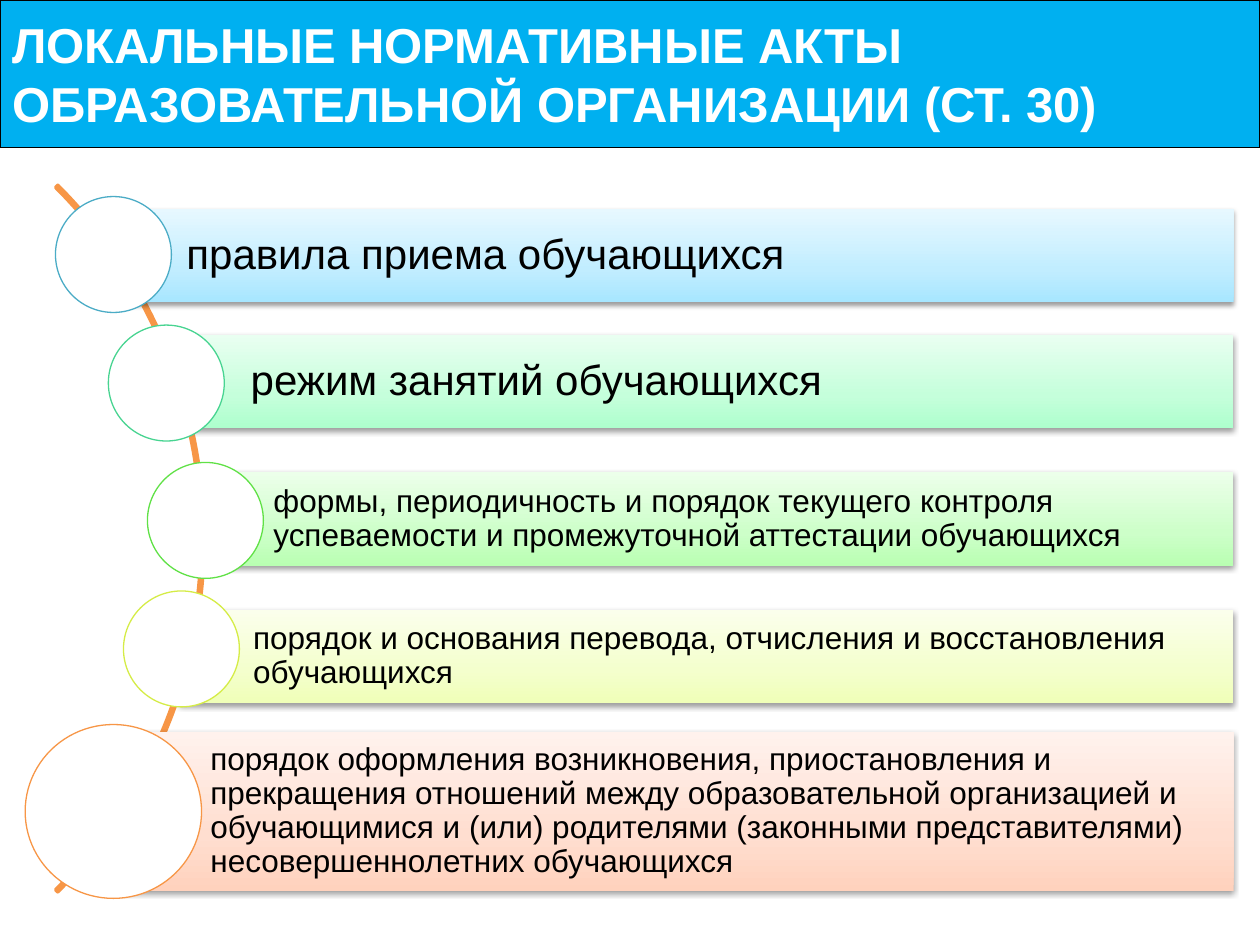
from dataclasses import dataclass

from copy import deepcopy
from lxml import etree
from pptx import Presentation
from pptx import util as u
from pptx.dml.color import RGBColor
from pptx.enum import shapes, text
from pptx.oxml.ns import qn

# Grid: 10 columns by 7.5 rows of equal square cells
WIDTH, HEIGHT = u.Inches(10), u.Inches(7.5)
COLUMN, ROW = WIDTH / 10, HEIGHT / 7.5
BAR_RIGHT = 9.79
FONT = "Arial"

BLACK = RGBColor(0x00, 0x00, 0x00)
WHITE = RGBColor(0xFF, 0xFF, 0xFF)
SKY = RGBColor(0x00, 0xB0, 0xF0)
ORANGE = RGBColor(0xF7, 0x96, 0x46)
TEAL = RGBColor(0x4B, 0xAC, 0xC6)
MINT = RGBColor(0x48, 0xD4, 0x91)
GREEN = RGBColor(0x60, 0xE1, 0x46)
LIME = RGBColor(0xD5, 0xEC, 0x46)

# Bar gradients, bottom to top
STOPS = (0, 0.35, 1)
BLUES = (RGBColor(0xA7, 0xE6, 0xFF), RGBColor(0xC1, 0xED, 0xFF), RGBColor(0xE7, 0xF8, 0xFF))
MINTS = (RGBColor(0xAD, 0xFF, 0xCD), RGBColor(0xC5, 0xFF, 0xDB), RGBColor(0xE9, 0xFF, 0xF1))
GREENS = (RGBColor(0xB9, 0xFF, 0xB2), RGBColor(0xCD, 0xFF, 0xC9), RGBColor(0xEC, 0xFF, 0xEA))
LIMES = (RGBColor(0xF0, 0xFF, 0xB8), RGBColor(0xF4, 0xFF, 0xCD), RGBColor(0xFB, 0xFF, 0xEC))
PEACHES = (RGBColor(0xFF, 0xD2, 0xBD), RGBColor(0xFF, 0xDE, 0xD0), RGBColor(0xFF, 0xF2, 0xED))


@dataclass(frozen=True)
class Box:
    left: float
    top: float
    width: float
    height: float


@dataclass(frozen=True)
class Act:
    wording: str
    left: float
    top: float
    circle_left: float
    circle_top: float
    gradient: tuple[RGBColor, ...]
    outline: RGBColor
    size: int = 18
    height: float = 0.74
    circle_width: float = 0.92
    circle_height: float = 0.92
    indent: float = 0.58


TITLE = ("ЛОКАЛЬНЫЕ НОРМАТИВНЫЕ АКТЫ", "ОБРАЗОВАТЕЛЬНОЙ ОРГАНИЗАЦИИ (СТ. 30)")
ACTS = (
    Act("правила приема обучающихся", 0.9, 1.66, 0.44, 1.56, BLUES, TEAL, size=24),
    Act("режим занятий обучающихся", 1.41, 2.66, 0.86, 2.58, MINTS, MINT, size=24),
    Act("формы, периодичность и порядок текущего контроля успеваемости "
        "и промежуточной аттестации обучающихся", 1.59, 3.75, 1.17, 3.67, GREENS, GREEN),
    Act("порядок и основания перевода, отчисления и восстановления обучающихся",
        1.43, 4.84, 0.98, 4.69, LIMES, LIME),
    Act("порядок оформления возникновения, приостановления и прекращения отношений "
        "между образовательной организацией и обучающимися и (или) родителями "
        "(законными представителями) несовершеннолетних обучающихся",
        0.9, 5.81, 0.2, 5.75, PEACHES, ORANGE, height=1.26,
        circle_width=1.4, circle_height=1.38, indent=0.77),
)


def add_shape(slide, kind, box: Box, fill: RGBColor | None = None,
              outline: RGBColor | None = None, weight: float = 0.75):
    shape = slide.shapes.add_shape(
        kind, round(box.left * COLUMN), round(box.top * ROW),
        round(box.width * COLUMN), round(box.height * ROW))
    shape.shadow.inherit = False
    if fill is None:
        shape.fill.background()
    else:
        shape.fill.solid()
        shape.fill.fore_color.rgb = fill
    if outline is None:
        shape.line.fill.background()
    else:
        shape.line.color.rgb = outline
        shape.line.width = u.Pt(weight)
    return shape


def add_run(paragraph, wording: str, size: int, color: RGBColor, bold: bool = False) -> None:
    paragraph.alignment = text.PP_ALIGN.LEFT
    run = paragraph.add_run()
    run.text = wording
    run.font.name, run.font.size = FONT, u.Pt(size)
    run.font.bold, run.font.color.rgb = bold, color


def set_gradient(shape, colors: tuple[RGBColor, ...]) -> None:
    shape.fill.gradient()
    shape.fill.gradient_angle = 90
    stop_list = shape._element.spPr.find(qn("a:gradFill")).find(qn("a:gsLst"))
    stop_list.append(deepcopy(stop_list[-1]))
    for stop, position, color in zip(shape.fill.gradient_stops, STOPS, colors):
        stop.position = position
        stop.color.rgb = color


def add_shadow(shape) -> None:
    effects = shape._element.spPr.find(qn("a:effectLst"))
    shadow = etree.SubElement(effects, qn("a:outerShdw"), blurRad=str(u.Pt(3.1)),
                              dist=str(u.Pt(1.6)), dir="5400000", rotWithShape="0")
    color = etree.SubElement(shadow, qn("a:srgbClr"), val=str(BLACK))
    etree.SubElement(color, qn("a:alpha"), val="38000")


def add_title(slide) -> None:
    banner = add_shape(slide, shapes.MSO_SHAPE.RECTANGLE, Box(0, 0, 10, 1.17), SKY, BLACK)
    frame = banner.text_frame
    frame.word_wrap = False
    frame.vertical_anchor = text.MSO_ANCHOR.MIDDLE
    for index, line in enumerate(TITLE):
        paragraph = frame.add_paragraph() if index else frame.paragraphs[0]
        add_run(paragraph, line, 28, WHITE, bold=True)


def add_arc(slide) -> None:
    arc = add_shape(slide, shapes.MSO_SHAPE.BLOCK_ARC, Box(-6.31, 0.31, 7.93, 7.93),
                    outline=ORANGE, weight=2)
    # Start angle, end angle and thickness
    for index, value in enumerate((189, 27, 0.003)):
        arc.adjustments[index] = value


def add_act(slide, act: Act) -> None:
    bar = add_shape(slide, shapes.MSO_SHAPE.RECTANGLE,
                    Box(act.left, act.top, BAR_RIGHT - act.left, act.height))
    set_gradient(bar, act.gradient)
    add_shadow(bar)
    frame = bar.text_frame
    frame.word_wrap = True
    frame.vertical_anchor = text.MSO_ANCHOR.MIDDLE
    frame.margin_left = round(act.indent * COLUMN)
    frame.margin_right = frame.margin_top = frame.margin_bottom = u.Inches(0.05)
    paragraph = frame.paragraphs[0]
    paragraph.line_spacing = 0.9
    add_run(paragraph, act.wording, act.size, BLACK)
    add_shape(slide, shapes.MSO_SHAPE.OVAL,
              Box(act.circle_left, act.circle_top, act.circle_width, act.circle_height),
              WHITE, act.outline)


def main() -> None:
    presentation = Presentation()
    presentation.slide_width, presentation.slide_height = WIDTH, HEIGHT
    slide = presentation.slides.add_slide(presentation.slide_layouts[6])
    add_title(slide)
    add_arc(slide)
    for act in ACTS:
        add_act(slide, act)
    presentation.save("out.pptx")


if __name__ == "__main__":
    main()
